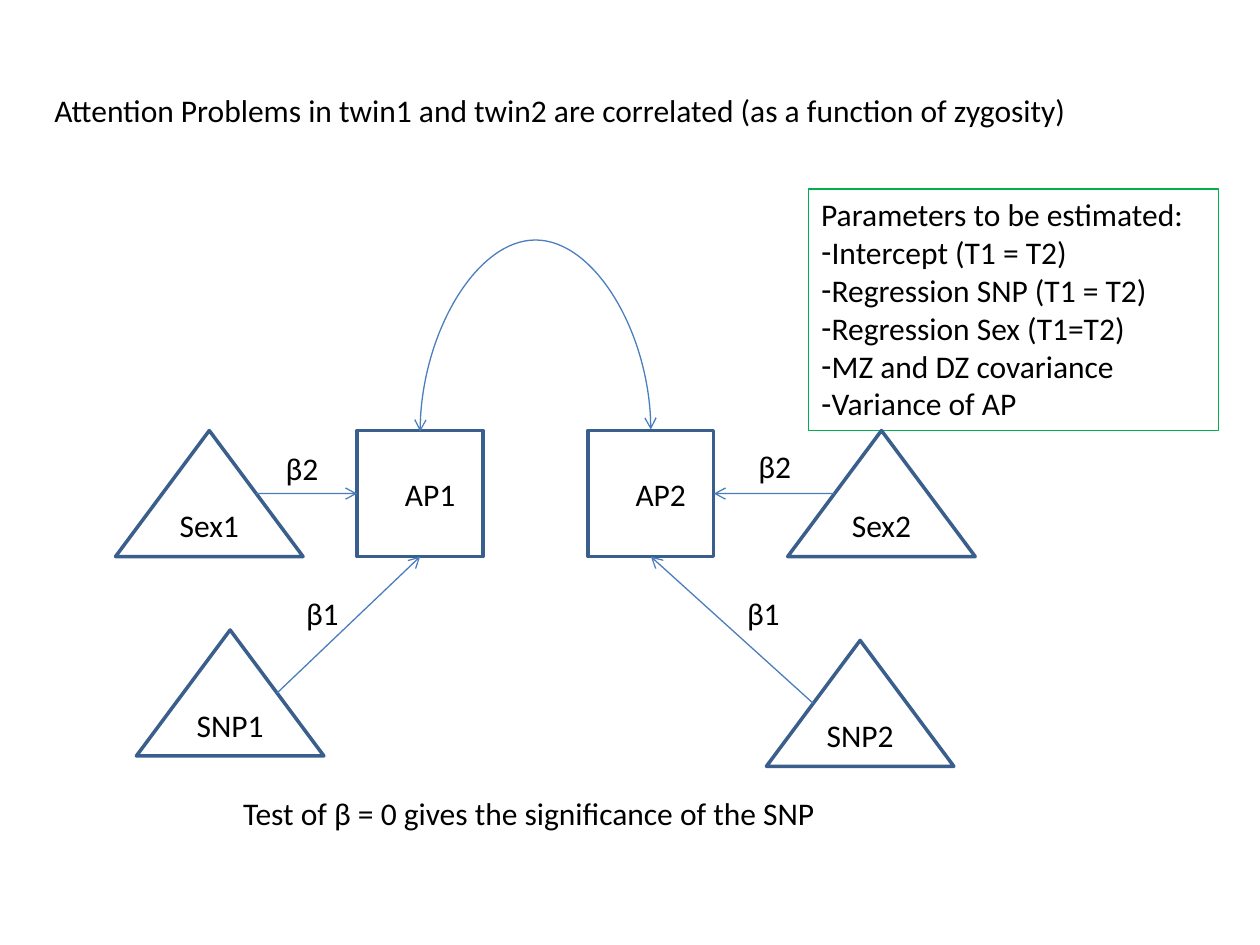
from lxml.etree import SubElement
from pptx import Presentation
from pptx.dml.color import RGBColor
from pptx.enum.shapes import MSO_CONNECTOR as LINK, MSO_SHAPE as SHAPE
from pptx.enum.text import MSO_ANCHOR as ANCHOR, MSO_AUTO_SIZE as FIT, PP_ALIGN as ALIGN
from pptx.oxml.ns import qn
from pptx.util import Cm, Pt

COLORS = {"text": "000000", "node": "FFFFFF", "outline": "3A5F8C",
          "path": "4B7EBC", "frame": "00B050"}
NODE_HEIGHT = 2.54
TRIANGLE_WIDTH = 3.78
LEFT, BOTTOM, RIGHT = 1, 2, 3
TWINS = [
    {"number": 1, "box": (2.33, 8.68), "trait": (4.87, 0), "sex": (0, 0),
     "snp": (0.42, 4.02), "β2": (3.18, 0.24), "β1": (3.59, 3.18),
     "trait_side": LEFT, "start": 0.75},
    {"number": 2, "box": (11.85, 8.68), "trait": (0, 0), "sex": (4.03, 0),
     "snp": (3.6, 4.23), "β2": (3.19, 0.21), "β1": (2.96, 3.18),
     "trait_side": RIGHT, "start": 0.25},
]
PARAMETERS = ["Parameters to be estimated:", "Intercept (T1 = T2)",
              "Regression SNP (T1 = T2)", "Regression Sex (T1=T2)",
              "MZ and DZ covariance", "Variance of AP"]


def rgb(name):
    """Return a palette colour."""
    return RGBColor.from_string(COLORS[name])


def place(shape, left, top, width, height):
    """Move a shape to a box given in centimetres."""
    shape.left, shape.top = Cm(left), Cm(top)
    shape.width, shape.height = Cm(width), Cm(height)


def style_text(paragraph, align=ALIGN.LEFT):
    """Give a paragraph the slide's single text style."""
    paragraph.alignment = align
    for run in paragraph.runs:
        run.font.name, run.font.size = "Calibri", Pt(18)
        run.font.color.rgb = rgb("text")


def add_label(slide, text, left, top, width):
    """Add a one-line text box."""
    label = slide.shapes.add_textbox(Cm(left), Cm(top), Cm(width), Cm(1.03))
    label.text_frame.text = text
    style_text(label.text_frame.paragraphs[0])


def add_node(slide, kind, text, left, top, width):
    """Add an outlined variable of the path diagram."""
    node = slide.shapes.add_shape(kind, Cm(left), Cm(top), Cm(width), Cm(NODE_HEIGHT))
    node.shadow.inherit = False
    node.fill.solid()
    node.fill.fore_color.rgb = rgb("node")
    node.line.color.rgb = rgb("outline")
    node.line.width = Pt(2)
    node.text_frame.vertical_anchor = ANCHOR.MIDDLE
    node.text_frame.text = text
    style_text(node.text_frame.paragraphs[0], ALIGN.CENTER)
    return node


def style_path(connector, *ends):
    """Draw a connector as a thin path with open arrows at the named ends."""
    connector.line.color.rgb = rgb("path")
    connector.line.width = Pt(0.75)
    properties = connector._element.spPr
    for end in ends:
        SubElement(properties.find(qn("a:ln")), qn(f"a:{end}"), type="arrow")
    SubElement(properties, qn("a:effectLst"))


def add_predictor(slide, text, left, top, trait, side, start):
    """Add a triangle with an arrow from its slanted side to the trait."""
    add_node(slide, SHAPE.ISOSCELES_TRIANGLE, text, left, top, TRIANGLE_WIDTH)
    x, y = Cm(left + TRIANGLE_WIDTH * start), Cm(top + NODE_HEIGHT / 2)
    effect = slide.shapes.add_connector(LINK.STRAIGHT, x, y, x, y)
    effect.end_connect(trait, side)
    style_path(effect, "tailEnd")


def add_twin(slide, twin):
    """Add one twin's trait, predictors and regression labels."""
    def at(part):
        return [base + offset for base, offset in zip(twin["box"], twin[part])]

    number = twin["number"]
    trait = add_node(slide, SHAPE.RECTANGLE, f"AP{number}", *at("trait"), NODE_HEIGHT)
    trait.text_frame.margin_left = Cm(0.65)
    for part, name, side in (("sex", "Sex", twin["trait_side"]), ("snp", "SNP", BOTTOM)):
        add_predictor(slide, f"{name}{number}", *at(part), trait, side, twin["start"])
    for beta in ("β1", "β2"):
        add_label(slide, beta, *at(beta), 1.17)


def add_correlation(slide, left, top, width, height):
    """Add the double-headed arch that stands on the bottom of its box."""
    step = 0.04
    middle_x, base = left + width / 2, top + height
    arch = slide.shapes.add_connector(
        LINK.CURVE, Cm(middle_x + step / 2), Cm(base + width / 2),
        Cm(middle_x - step / 2), Cm(base - width / 2))
    properties = arch._element.spPr
    properties.find(qn("a:xfrm")).set("rot", "5400000")
    guides = properties.find(qn("a:prstGeom")).get_or_add_avLst()
    SubElement(guides, qn("a:gd"), name="adj1", fmla=f"val {round(height / step * 100000)}")
    style_path(arch, "headEnd", "tailEnd")


def fill_title(title, *box):
    """Place the heading in the title placeholder."""
    place(title, *box)
    frame = title.text_frame
    frame.text = "Attention Problems in twin1 and twin2 are correlated (as a function of zygosity)"
    frame.word_wrap = False
    frame.auto_size = FIT.NONE
    frame.vertical_anchor = ANCHOR.TOP
    style_text(frame.paragraphs[0])


def fill_parameters(body, *box):
    """Place the framed parameter list in the body placeholder."""
    place(body, *box)
    body.line.color.rgb = rgb("frame")
    body.line.width = Pt(0.75)
    frame = body.text_frame
    frame.text = "\n".join(PARAMETERS)
    frame.auto_size = FIT.NONE
    for index, paragraph in enumerate(frame.paragraphs):
        paragraph.space_before = Pt(0)
        layout = paragraph._p.get_or_add_pPr()
        layout.set("marL", "0")
        layout.set("indent", "0")
        if index:
            SubElement(layout, qn("a:buChar"), char="-")
        else:
            SubElement(layout, qn("a:buNone"))
        style_text(paragraph)


def main():
    """Build the twin path diagram slide."""
    deck = Presentation()
    deck.slide_width, deck.slide_height = Cm(25.4), Cm(19.05)
    slide = deck.slides.add_slide(deck.slide_layouts[1])
    fill_title(slide.shapes.title, 0.84, 1.7, 21.13, 1.03)
    fill_parameters(slide.placeholders[1], 16.3, 3.81, 8.26, 4.87)
    for twin in TWINS:
        add_twin(slide, twin)
    add_correlation(slide, 8.47, 4.82, 4.65, 3.86)
    add_label(slide, "Test of β = 0 gives the significance of the SNP", 4.65, 15.88, 12.19)
    deck.save("out.pptx")


if __name__ == "__main__":
    main()
